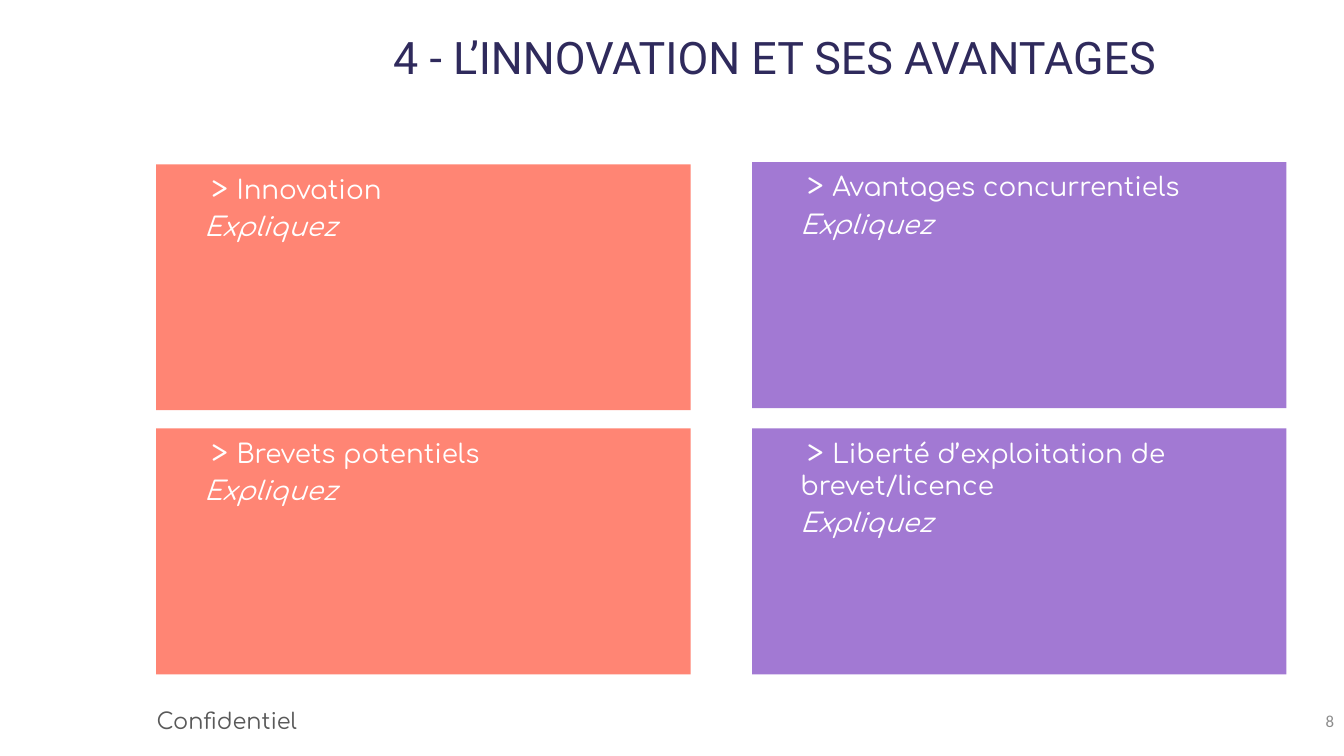
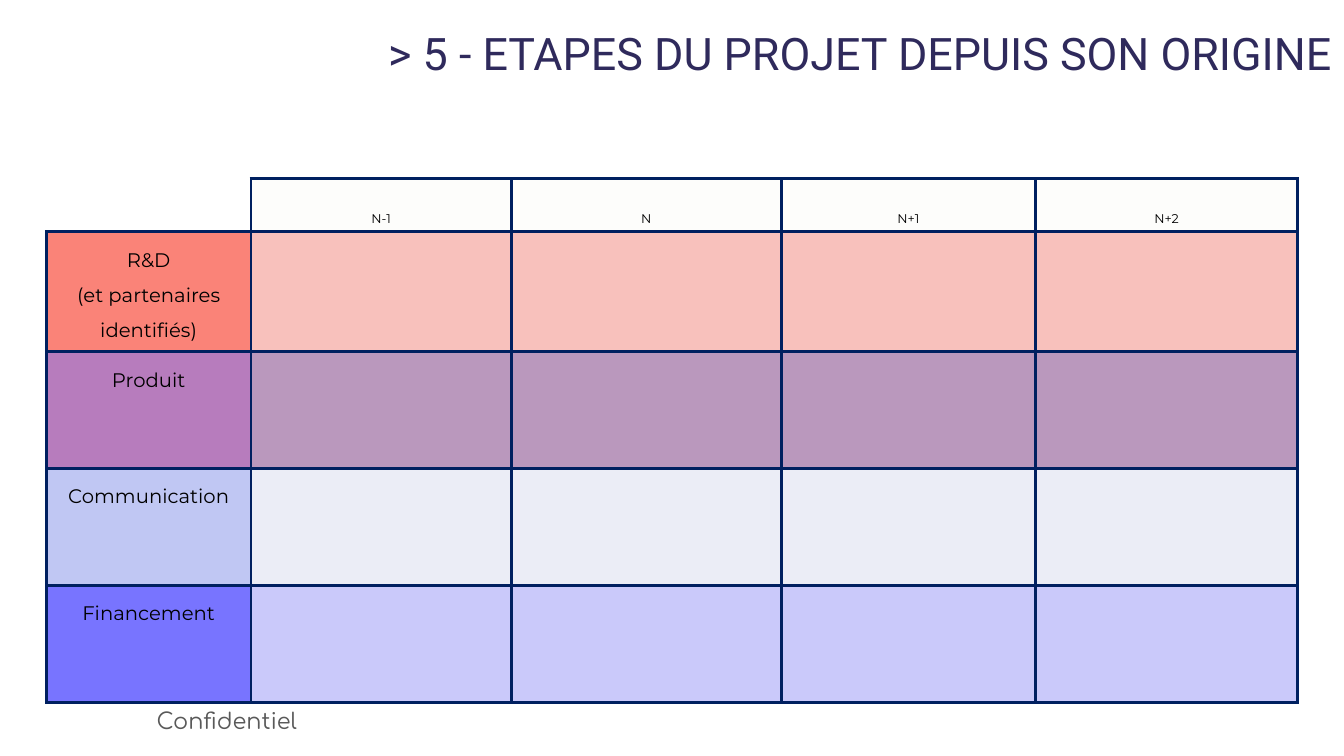
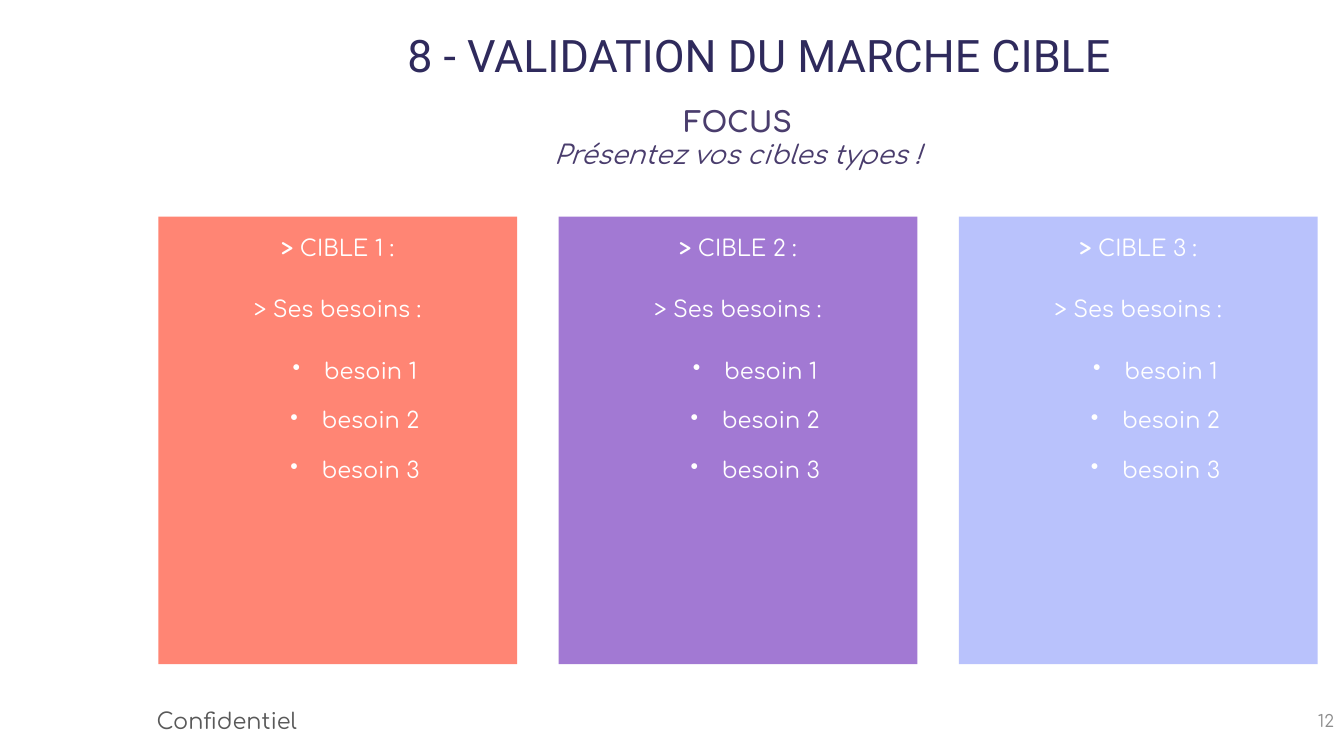
import pptx
import pptx.util
import pptx.dml.color
import pptx.enum.shapes
import pptx.enum.text
import pptx.oxml
import pptx.oxml.ns

Inches, Pt = pptx.util.Inches, pptx.util.Pt
RGB = pptx.dml.color.RGBColor
ALIGN, ANCHOR = pptx.enum.text.PP_ALIGN, pptx.enum.text.MSO_ANCHOR
RECT = pptx.enum.shapes.MSO_SHAPE.RECTANGLE

# Colours and fonts
WHITE, BLACK = RGB(0xFF, 0xFF, 0xFF), RGB(0, 0, 0)
INK, PLUM = RGB(0x2F, 0x2A, 0x5C), RGB(0x4A, 0x3D, 0x6D)
DARK, GREY = RGB(0x59, 0x59, 0x59), RGB(0x8C, 0x8C, 0x8C)
CORAL, VIOLET, SKY = RGB(0xFF, 0x85, 0x74), RGB(0xA2, 0x79, 0xD3), RGB(0xB9, 0xC2, 0xFC)
NAVY, IVORY = RGB(0, 0x20, 0x60), RGB(0xFD, 0xFD, 0xFB)
ROUND = "Comfortaa"

deck = pptx.Presentation()
deck.slide_width, deck.slide_height = Inches(13.33), Inches(7.5)


def write(shape, lines, size, color, font=ROUND, align=ALIGN.LEFT, anchor=ANCHOR.TOP, inset=None):
    """Fill a shape or cell with one paragraph per line and return the paragraphs."""
    frame = shape.text_frame
    frame.word_wrap = True
    frame.vertical_anchor = anchor
    if inset is not None:
        frame.margin_left = frame.margin_right = Inches(inset)
        frame.margin_top = frame.margin_bottom = Inches(inset)
    frame.text = "\n".join(lines)
    for para in frame.paragraphs:
        para.alignment = align
        para.font.size, para.font.name = Pt(size), font
        para.font.color.rgb = color
    return frame.paragraphs


def start(title, left, top, width, height, number=None, font=ROUND):
    """Add a slide with its title, footer and optional page number."""
    slide = deck.slides.add_slide(deck.slide_layouts[5])
    head = slide.shapes.title
    head.left, head.top = Inches(left), Inches(top)
    head.width, head.height = Inches(width), Inches(height)
    write(head, [title], 32, INK, "Roboto", inset=0.1)
    head.text_frame.auto_size = pptx.enum.text.MSO_AUTO_SIZE.NONE
    foot = slide.shapes.add_textbox(0, Inches(6.95), Inches(4.5), Inches(0.4))
    write(foot, ["Confidentiel"], 16, DARK, align=ALIGN.CENTER, anchor=ANCHOR.MIDDLE)
    if number:
        page = slide.shapes.add_textbox(Inches(10.33), Inches(6.95), Inches(3), Inches(0.4))
        write(page, [number], 12, GREY, font, ALIGN.RIGHT, ANCHOR.MIDDLE)
    return slide


# Slide 1: four cards
slide = start("4 - L’INNOVATION ET SES AVANTAGES", 3.8, 0.19, 9.99, 1.42, "8", "Calibri")
cards = [
    ("Innovation", 1.55, 1.63, CORAL),
    ("Avantages concurrentiels", 7.46, 1.61, VIOLET),
    ("Brevets potentiels", 1.55, 4.25, CORAL),
    ("Liberté d’exploitation de brevet/licence", 7.46, 4.25, VIOLET),
]
for name, left, top, color in cards:
    card = slide.shapes.add_shape(RECT, Inches(left), Inches(top), Inches(5.3), Inches(2.44))
    card.shadow.inherit = False
    card.fill.solid()
    card.fill.fore_color.rgb = color
    card.line.fill.background()
    first, second = write(card, ["> ", "Expliquez"], 18.7, WHITE)
    first.runs[0].font.size = Pt(21.3)
    first.add_run().text = name
    second.space_before = Pt(4)
    second.font.italic = True
    for para, indent in ((first, 0.07), (second, 0)):
        props = para._p.get_or_add_pPr()
        props.set("marL", str(Inches(0.38)))
        props.set("indent", str(Inches(indent)))

# Slide 2: project stages by year
slide = start("> 5 - ETAPES DU PROJET DEPUIS SON ORIGINE", 3.75, 0.15, 11.3, 1.42)
years = ["N-1", "N", "N+1", "N+2"]
stages = [
    (["R&D", "(et partenaires identifiés)"], RGB(0xFA, 0x83, 0x78), RGB(0xF8, 0xC1, 0xBC)),
    (["Produit"], RGB(0xB7, 0x7C, 0xBD), RGB(0xBA, 0x98, 0xBD)),
    (["Communication"], RGB(0xC0, 0xC7, 0xF3), RGB(0xEB, 0xED, 0xF6)),
    (["Financement"], RGB(0x78, 0x74, 0xFF), RGB(0xCA, 0xC9, 0xFA)),
]
grid = slide.shapes.add_table(5, 5, Inches(0.46), Inches(1.77), Inches(12.41), Inches(5.18)).table
grid.first_row = grid.horz_banding = False
for col, width in zip(grid.columns, (2.03, 2.58, 2.68, 2.52, 2.6)):
    col.width = Inches(width)
for row, height in zip(grid.rows, (0.51, 1.19, 1.16, 1.16, 1.16)):
    row.height = Inches(height)

for r in range(5):
    for c in range(5):
        cell = grid.cell(r, c)
        # Borders, white on the outer sides of the corner
        for side in "LRTB":
            edge = WHITE if r == c == 0 and side in "LT" else NAVY
            cell._tc.get_or_add_tcPr().append(pptx.oxml.parse_xml(
                f'<a:ln{side} {pptx.oxml.ns.nsdecls("a")} w="{Pt(2.25)}">'
                f'<a:solidFill><a:srgbClr val="{edge}"/></a:solidFill></a:ln{side}>'))
        if r == c == 0:
            cell.fill.background()
            continue
        cell.fill.solid()
        paras = []
        if r == 0:
            cell.fill.fore_color.rgb = IVORY
            paras = write(cell, [years[c - 1]], 9, BLACK, "Montserrat", ALIGN.CENTER, inset=0)
        else:
            lines, strong, pale = stages[r - 1]
            cell.fill.fore_color.rgb = pale if c else strong
            if c == 0:
                paras = write(cell, lines, 14, BLACK, "Montserrat", ALIGN.CENTER, ANCHOR.MIDDLE, 0)
        for para in paras:
            para.line_spacing = Pt(25.2 if r else 30.8)

# Slide 3: three targets
slide = start("8 - VALIDATION DU MARCHE CIBLE", 3.94, 0.17, 9.75, 0.76, "12")
focus = slide.shapes.add_textbox(Inches(4.78), Inches(0.91), Inches(5.08), Inches(0.88))
first, second = write(focus, ["FOCUS", "Présentez vos cibles types !"], 18.7, PLUM,
                      align=ALIGN.CENTER, inset=0.13)
first.font.size, first.font.bold = Pt(20), True
second.font.italic = True

needs = [f"besoin {n}" for n in (1, 2, 3)]
for i, color in enumerate((CORAL, VIOLET, SKY)):
    card = slide.shapes.add_shape(RECT, Inches(1.57 + 3.97 * i), Inches(2.15),
                                  Inches(3.56), Inches(4.44))
    card.shadow.inherit = False
    card.fill.solid()
    card.fill.fore_color.rgb = color
    card.line.fill.background()
    paras = write(card, ["> ", "> Ses besoins :"] + needs, 16, WHITE,
                  align=ALIGN.CENTER, inset=0.13)
    paras[0].runs[0].font.bold = True
    paras[0].add_run().text = f"CIBLE {i + 1} :"
    for n, para in enumerate(paras):
        para.line_spacing = 1.15
        para.space_after = Pt(22 if n < 2 else 13.3)
        if n >= 2:
            props = para._p.get_or_add_pPr()
            props.set("marL", str(Inches(0.65)))
            props.set("indent", str(Inches(-0.31)))
            mark = pptx.oxml.parse_xml(f'<a:buChar {pptx.oxml.ns.nsdecls("a")} char="•"/>')
            props.insert_element_before(mark, "a:tabLst", "a:defRPr", "a:extLst")

deck.save("out.pptx")
